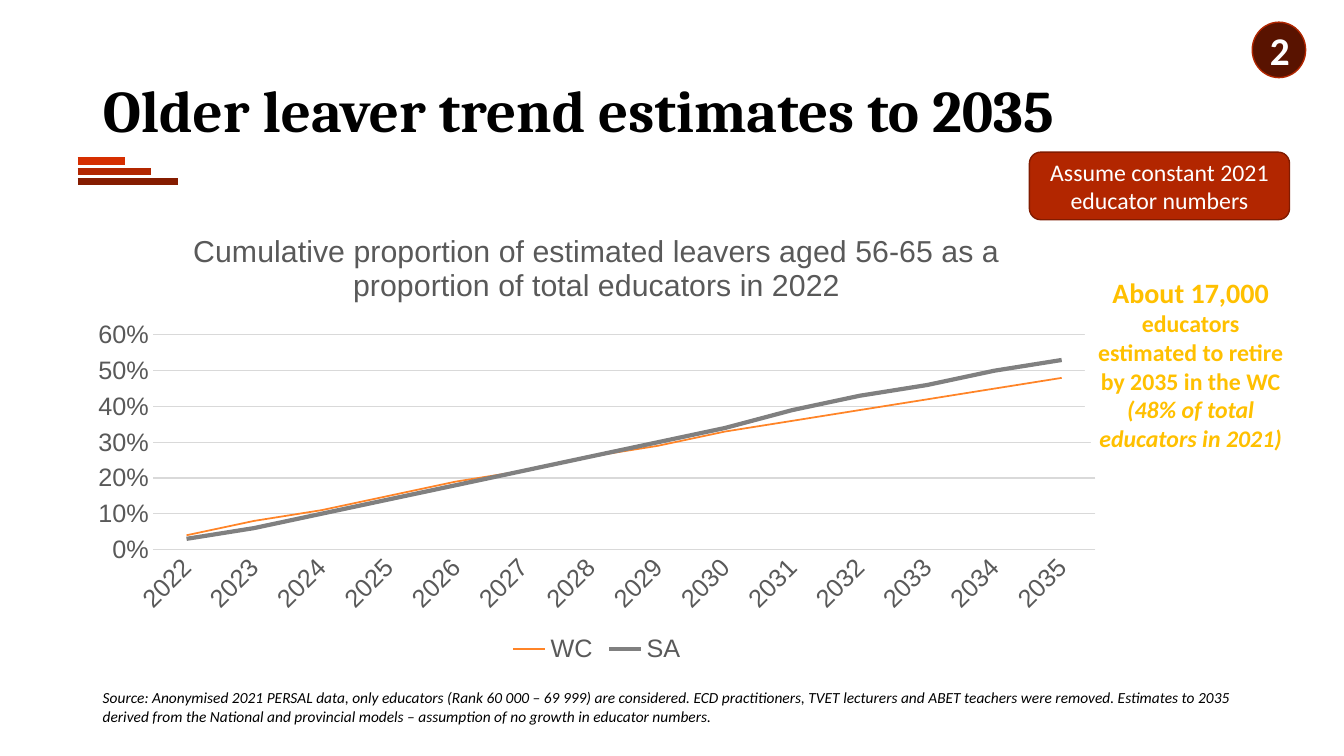
from lxml import etree
from pptx import Presentation
from pptx.chart.data import CategoryChartData
from pptx.dml.color import RGBColor
from pptx.enum import chart as ch, shapes, text
from pptx.oxml.ns import qn
from pptx.util import Inches, Pt

HEADING = "Older leaver trend estimates to 2035"
SOURCE = ("Source: Anonymised 2021 PERSAL data, only educators (Rank 60 000 – 69 999) are considered. "
          "ECD practitioners, TVET lecturers and ABET teachers were removed. Estimates to 2035 derived "
          "from the National and provincial models – assumption of no growth in educator numbers.")
ASSUMPTION = "Assume constant 2021 educator numbers"
FINDING = [  # text, size, italic
    ("About 17,000", 20, False),
    ("educators estimated to retire by 2035 in the WC", 17, False),
    ("(48% of total educators in 2021)", 17, True),
]
CHART_TITLE = ("Cumulative proportion of estimated leavers aged 56-65 "
               "as a proportion of total educators in 2022")
YEARS = [str(year) for year in range(2022, 2036)]
LEAVERS = [  # province or country, colour, line width, proportions
    ("WC", "FF8427", 1.25,
     (0.04, 0.08, 0.11, 0.15, 0.19, 0.22, 0.26, 0.29, 0.33, 0.36, 0.39, 0.42, 0.45, 0.48)),
    ("SA", "808080", 3,
     (0.03, 0.06, 0.1, 0.14, 0.18, 0.22, 0.26, 0.3, 0.34, 0.39, 0.43, 0.46, 0.5, 0.53)),
]
STRIPES = [(1.77, "851C00"), (1.5, "B22600"), (1.24, "D62E00")]  # right end, colour; bottom up
GREY, GRID = "595959", "D9D9D9"


def rgb(value):
    return RGBColor.from_string(value)


def box(*lengths):
    return [Inches(length) for length in lengths]


def style(font, name, size, color, bold=False, italic=False):
    font.name, font.size, font.bold, font.italic = name, Pt(size), bold, italic
    font.color.rgb = rgb(color)


def set_line(line, color, width):
    line.color.rgb, line.width = rgb(color), Pt(width)


def write(shape, paragraphs, color, align=text.PP_ALIGN.CENTER, bold=False):
    frame = shape.text_frame
    frame.word_wrap = True
    frame.vertical_anchor = text.MSO_ANCHOR.MIDDLE
    for i, (words, size, italic) in enumerate(paragraphs):
        paragraph = frame.add_paragraph() if i else frame.paragraphs[0]
        paragraph.text, paragraph.alignment = words, align
        style(paragraph.font, "Calibri", size, color, bold, italic)


def add_panel(kind, place, fill, outline=None):
    panel = slide.shapes.add_shape(kind, *box(*place))
    panel.shadow.inherit = False
    panel.fill.solid()
    panel.fill.fore_color.rgb = rgb(fill)
    if outline:
        set_line(panel.line, outline, 1)
    else:
        panel.line.fill.background()
    return panel


prs = Presentation()
prs.slide_width, prs.slide_height = box(13.33, 7.5)
slide = prs.slides.add_slide(prs.slide_layouts[5])

# Stripes under the title
for i, (right, color) in enumerate(STRIPES):
    y = 1.8 - 0.1 * i
    stripe = slide.shapes.add_connector(shapes.MSO_CONNECTOR.STRAIGHT, *box(0.77, y, right, y))
    set_line(stripe.line, color, 5.5)
    etree.SubElement(stripe._element.spPr, qn("a:effectLst"))

# Title
title = slide.shapes.title
title.left, title.top, title.width, title.height = box(0.92, 0.4, 11.5, 1.45)
title.text_frame.text = HEADING
title.text_frame.vertical_anchor = text.MSO_ANCHOR.MIDDLE
heading = title.text_frame.paragraphs[0]
heading.alignment, heading.line_spacing = text.PP_ALIGN.LEFT, 0.9
style(heading.font, "Cambria", 42, "000000", bold=True)

# Source and assumption
source = slide.shapes.add_textbox(*box(0.92, 6.83, 11.72, 0.37))
write(source, [(SOURCE, 11, True)], "000000", text.PP_ALIGN.LEFT)
assumption = add_panel(shapes.MSO_SHAPE.ROUNDED_RECTANGLE, (10.21, 1.51, 2.58, 0.67), "B22600", "811B00")
write(assumption, [(ASSUMPTION, 17, False)], "FFFFFF")

# Chart of cumulative leavers
data = CategoryChartData(number_format="0%")
data.categories = YEARS
for name, _, _, proportions in LEAVERS:
    data.add_series(name, proportions)
chart = slide.shapes.add_chart(ch.XL_CHART_TYPE.LINE, *box(0.77, 2.1, 10.3, 4.53), data).chart
style(chart.font, "Arial", 18, GREY)
chart.chart_title.text_frame.text = CHART_TITLE
style(chart.chart_title.text_frame.paragraphs[0].font, "Arial", 21.6, GREY)
chart.chart_title.include_in_layout = False
chart.has_legend = True
chart.legend.position = ch.XL_LEGEND_POSITION.BOTTOM
chart.legend.include_in_layout = False
style(chart.legend.font, "Arial", 18, GREY)

plot = chart.plots[0]
plot.vary_by_categories = False
for series, (_, color, width, _) in zip(plot.series, LEAVERS):
    series.smooth = False
    series.marker.style = ch.XL_MARKER_STYLE.NONE
    set_line(series.format.line, color, width)

years, share = chart.category_axis, chart.value_axis
for axis in (years, share):
    axis.major_tick_mark = axis.minor_tick_mark = ch.XL_TICK_MARK.NONE
    style(axis.tick_labels.font, "Arial", 18, GREY)
set_line(years.format.line, GRID, 0.75)
years._element.find(qn("c:txPr")).find(qn("a:bodyPr")).set("rot", "-2700000")
share.minimum_scale, share.maximum_scale, share.major_unit = 0, 0.6, 0.1
share.tick_labels.number_format = "0%"
share.tick_labels.number_format_is_linked = False
share.format.line.fill.background()
set_line(share.major_gridlines.format.line, GRID, 0.75)

# Finding beside the chart
finding = add_panel(shapes.MSO_SHAPE.ROUNDED_RECTANGLE, (10.76, 2.71, 2.1, 1.8), "FFFFFF")
frame = finding.text_frame
frame.margin_left = frame.margin_right = frame.margin_top = frame.margin_bottom = 0
write(finding, FINDING, "FFC000", bold=True)

# Number badge
badge = add_panel(shapes.MSO_SHAPE.OVAL, (12.42, 0.22, 0.53, 0.55), "591300", "B22600")
write(badge, [("2", 28, False)], "FFFFFF", bold=True)

prs.save("out.pptx")
